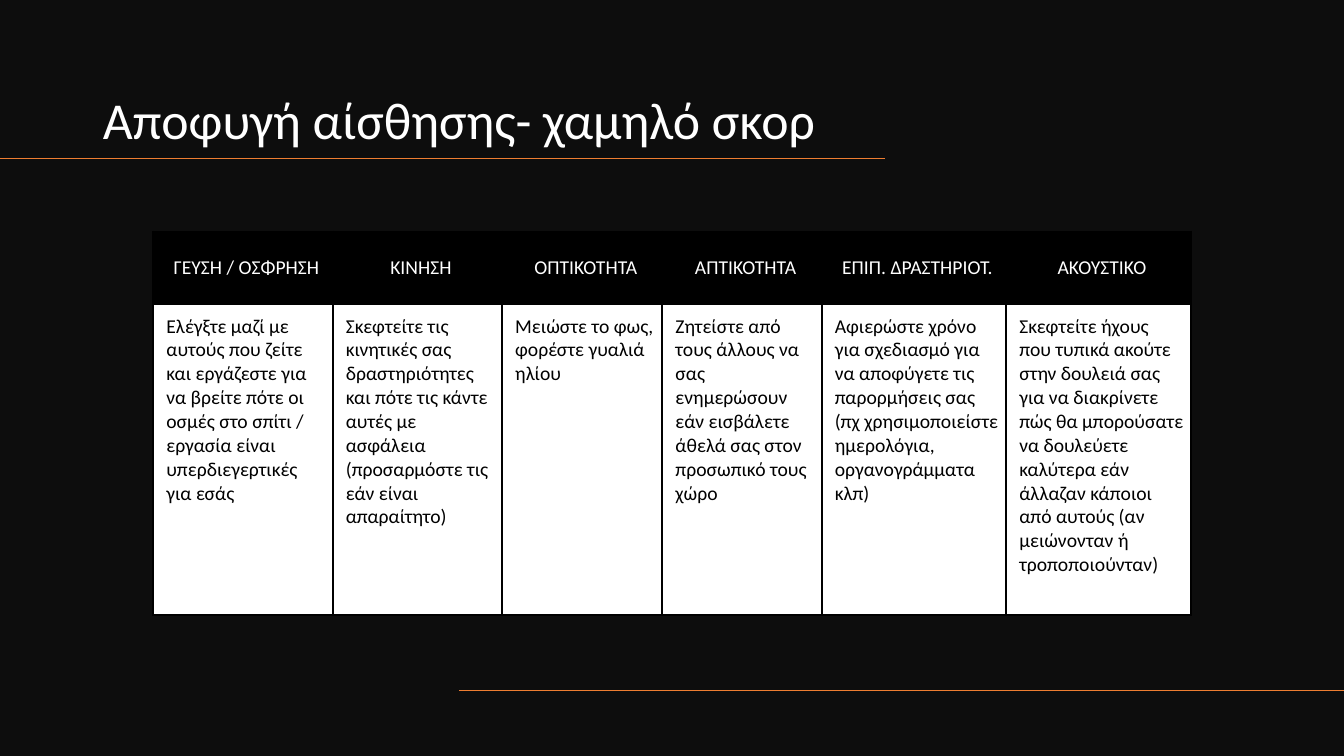
"""Builds a dark slide with a title, two accent lines and a table of advice."""
from lxml.etree import SubElement
from pptx import Presentation
from pptx.dml.color import RGBColor
from pptx.enum.shapes import MSO_CONNECTOR, MSO_SHAPE
from pptx.enum.text import MSO_ANCHOR, MSO_AUTO_SIZE, PP_ALIGN
from pptx.oxml import parse_xml
from pptx.oxml.ns import nsdecls, qn
from pptx.util import Inches, Pt

FONT = "Calibri"
BLACK, WHITE, NIGHT, ORANGE = "000000", "FFFFFF", "0D0D0D", "ED7D31"
COLUMNS = [
    ("ΓΕΥΣΗ / ΟΣΦΡΗΣΗ", 1.78,
     "Ελέγξτε μαζί με αυτούς που ζείτε και εργάζεστε για να βρείτε πότε οι "
     "οσμές στο σπίτι / εργασία είναι υπερδιεγερτικές για εσάς"),
    ("ΚΙΝΗΣΗ", 1.68,
     "Σκεφτείτε τις κινητικές σας δραστηριότητες και πότε τις κάντε αυτές με "
     "ασφάλεια (προσαρμόστε τις εάν είναι απαραίτητο)"),
    ("ΟΠΤΙΚΟΤΗΤΑ", 1.59, "Μειώστε το φως, φορέστε γυαλιά ηλίου"),
    ("ΑΠΤΙΚΟΤΗΤΑ", 1.58,
     "Ζητείστε από τους άλλους να σας ενημερώσουν εάν εισβάλετε άθελά σας "
     "στον προσωπικό τους χώρο"),
    ("ΕΠΙΠ. ΔΡΑΣΤΗΡΙΟΤ.", 1.83,
     "Αφιερώστε χρόνο για σχεδιασμό για να αποφύγετε τις παρορμήσεις σας (πχ "
     "χρησιμοποιείστε ημερολόγια, οργανογράμματα κλπ)"),
    ("ΑΚΟΥΣΤΙΚΟ", 1.83,
     "Σκεφτείτε ήχους που τυπικά ακούτε στην δουλειά σας για να διακρίνετε "
     "πώς θα μπορούσατε να δουλεύετε καλύτερα εάν άλλαζαν κάποιοι από αυτούς "
     "(αν μειώνονταν ή τροποποιούνταν)"),
]
ROW_HEIGHTS = (0.72, 3.08)


def color(value):
    return RGBColor.from_string(value)


def style_paragraph(para, size, ink, align):
    para.alignment = align
    para.font.name = FONT
    para.font.size = Pt(size)
    para.font.color.rgb = color(ink)


def set_title(page, text):
    title = page.shapes.title
    title.left, title.top = Inches(0.92), Inches(0.42)
    title.width, title.height = Inches(7.86), Inches(1.12)
    frame = title.text_frame
    frame.text = text
    frame.word_wrap = True
    frame.auto_size = MSO_AUTO_SIZE.NONE
    frame.vertical_anchor = MSO_ANCHOR.BOTTOM
    para = frame.paragraphs[0]
    para.line_spacing = 0.9
    style_paragraph(para, 37, WHITE, PP_ALIGN.LEFT)


def add_backdrop(page, width, height):
    backdrop = page.shapes.add_shape(MSO_SHAPE.RECTANGLE, 0, 0, width, height)
    backdrop.shadow.inherit = False
    backdrop.fill.solid()
    backdrop.fill.fore_color.rgb = color(NIGHT)
    backdrop.line.fill.background()
    page.shapes.title._element.addprevious(backdrop._element)


def add_accent_line(page, start, end, top):
    line = page.shapes.add_connector(
        MSO_CONNECTOR.STRAIGHT, Inches(start), Inches(top), Inches(end), Inches(top))
    line.line.color.rgb = color(ORANGE)
    line.line.width = Pt(1)
    SubElement(line._element.spPr, qn("a:effectLst"))


def add_borders(cell):
    properties = cell._tc.get_or_add_tcPr()
    for index, side in enumerate("LRTB"):
        properties.insert(index, parse_xml(
            f'<a:ln{side} {nsdecls("a")} w="{Pt(1.5)}"><a:solidFill>'
            f'<a:srgbClr val="{BLACK}"/></a:solidFill></a:ln{side}>'))


def fill_cell(cell, text, paper, ink, align, anchor):
    cell.text = text
    cell.margin_left, cell.margin_right = Inches(0.13), Inches(0.06)
    cell.margin_top = cell.margin_bottom = Inches(0.1)
    cell.vertical_anchor = anchor
    cell.fill.solid()
    cell.fill.fore_color.rgb = color(paper)
    style_paragraph(cell.text_frame.paragraphs[0], 14, ink, align)
    add_borders(cell)


def add_advice_table(page):
    total = sum(width for _, width, _ in COLUMNS)
    table = page.shapes.add_table(
        len(ROW_HEIGHTS), len(COLUMNS), Inches(1.52), Inches(2.3),
        Inches(total), Inches(sum(ROW_HEIGHTS))).table
    for row, height in zip(table.rows, ROW_HEIGHTS):
        row.height = Inches(height)
    for index, (sense, width, advice) in enumerate(COLUMNS):
        table.columns[index].width = Inches(width)
        fill_cell(table.cell(0, index), sense, BLACK, WHITE,
                  PP_ALIGN.CENTER, MSO_ANCHOR.MIDDLE)
        fill_cell(table.cell(1, index), advice, WHITE, BLACK,
                  PP_ALIGN.LEFT, MSO_ANCHOR.TOP)


def main():
    deck = Presentation()
    deck.slide_width, deck.slide_height = Inches(13.33), Inches(7.5)
    page = deck.slides.add_slide(deck.slide_layouts[5])
    set_title(page, "Αποφυγή αίσθησης- χαμηλό σκορ")
    add_backdrop(page, deck.slide_width, deck.slide_height)
    add_accent_line(page, 8.78, 0, 1.57)
    add_accent_line(page, 13.33, 4.55, 6.85)
    add_advice_table(page)
    deck.save("out.pptx")


if __name__ == "__main__":
    main()
